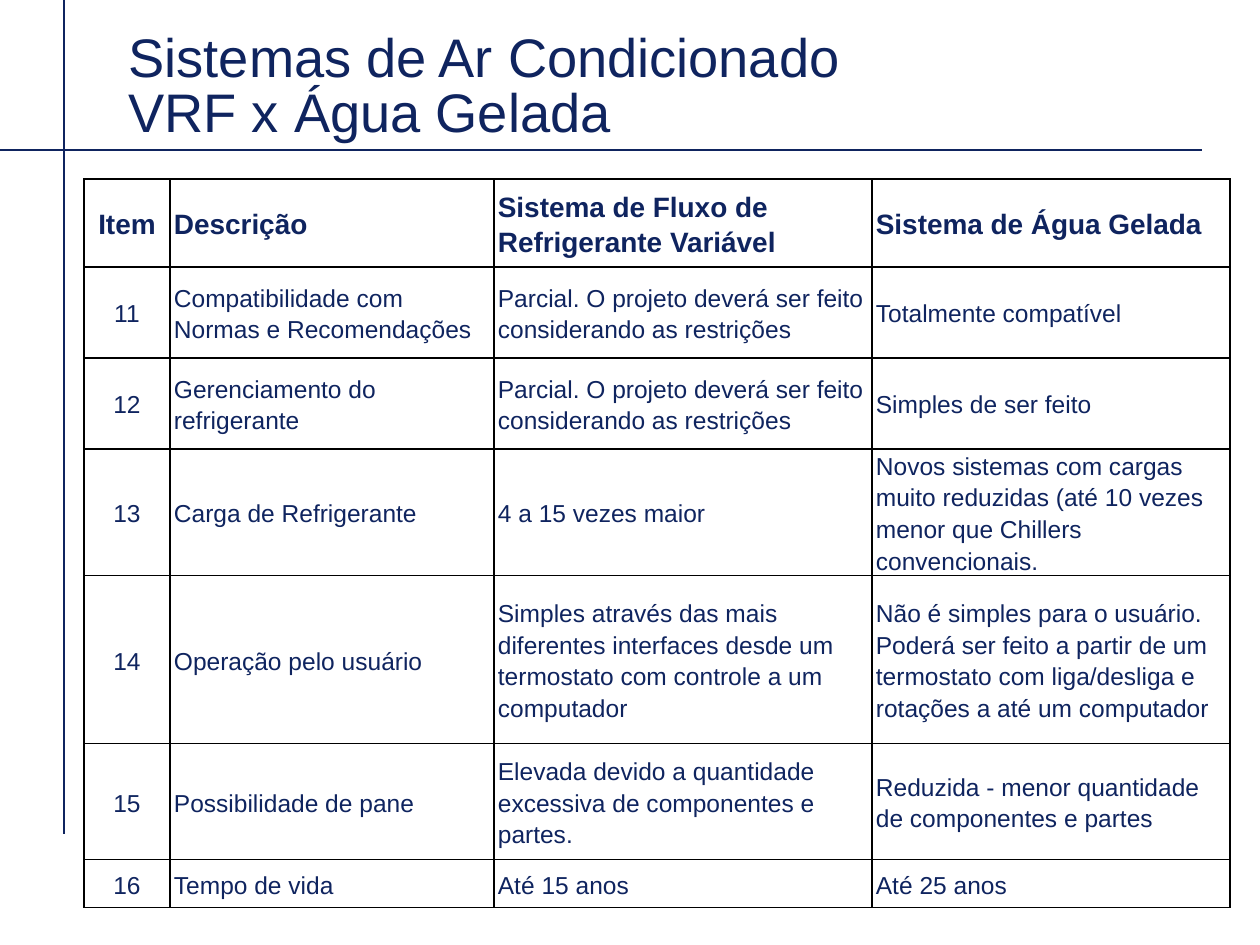
from copy import deepcopy
from dataclasses import dataclass

from lxml import etree
from pptx import Presentation
from pptx.dml.color import RGBColor
from pptx.enum.shapes import MSO_CONNECTOR
from pptx.enum.text import MSO_ANCHOR, MSO_AUTO_SIZE, PP_ALIGN
from pptx.oxml.ns import qn
from pptx.util import Emu, Pt

STRAIGHT = MSO_CONNECTOR.STRAIGHT
MIDDLE, BOTTOM = MSO_ANCHOR.MIDDLE, MSO_ANCHOR.BOTTOM
NO_AUTOFIT = MSO_AUTO_SIZE.NONE
LEFT, CENTER = PP_ALIGN.LEFT, PP_ALIGN.CENTER
EMU_PER_INCH, PX_PER_INCH = 914400, 126


@dataclass(frozen=True)
class Theme:
    """Colours, font and type sizes of the slide."""
    navy: RGBColor = RGBColor(0x0F, 0x24, 0x5F)
    white: RGBColor = RGBColor(0xFF, 0xFF, 0xFF)
    border: str = "000000"
    font: str = "Arial"
    title: int = 31
    header: int = 16
    body: int = 14
    rule: float = 0.75
    grid: float = 1


THEME = Theme()
SLIDE_BOX = (0, 0, 1260, 945)
TITLE_BOX = (116, 21, 932, 129)
TABLE_BOX = (84, 179, 1145, 736)
COLUMN_WIDTHS = (86, 324, 378, 358)
ROW_HEIGHTS = (88, 91, 91, 94, 168, 116, 48)
CELL_INSET = 4
TITLE = "Sistemas de Ar Condicionado\vVRF x Água Gelada"
RESTRICTIONS = "Parcial. O projeto deverá ser feito considerando as restrições"
COMPARISON = (
    ("Item", "Descrição", "Sistema de Fluxo de Refrigerante Variável",
     "Sistema de Água Gelada"),
    ("11", "Compatibilidade com Normas e Recomendações", RESTRICTIONS,
     "Totalmente compatível"),
    ("12", "Gerenciamento do refrigerante", RESTRICTIONS,
     "Simples de ser feito"),
    ("13", "Carga de Refrigerante", "4 a 15 vezes maior",
     "Novos sistemas com cargas muito reduzidas (até 10 vezes menor que "
     "Chillers convencionais."),
    ("14", "Operação pelo usuário",
     "Simples através das mais diferentes interfaces desde um termostato "
     "com controle a um computador",
     "Não é simples para o usuário.\nPoderá ser feito a partir de um "
     "termostato com liga/desliga e rotações a até um computador"),
    ("15", "Possibilidade de pane",
     "Elevada devido a quantidade excessiva de componentes e partes.",
     "Reduzida - menor quantidade de componentes e partes"),
    ("16", "Tempo de vida", "Até 15 anos", "Até 25 anos"),
)


def px(length):
    """Turn px into EMU."""
    return Emu(round(length * EMU_PER_INCH / PX_PER_INCH))


def write_text(frame, text, *, size, bold=False, align=LEFT, spacing=1.0):
    """Fill a text frame and format each paragraph and line break."""
    frame.text = text
    for paragraph in frame.paragraphs:
        paragraph.alignment = align
        paragraph.line_spacing = spacing
        for run in paragraph.runs:
            run.font.name = THEME.font
            run.font.size = Pt(size)
            run.font.bold = bold
            run.font.color.rgb = THEME.navy
        for line_break in paragraph._p.findall(qn("a:br")):
            line_break.insert(0, deepcopy(paragraph.runs[0]._r.rPr))


def add_rule(slide, start, end):
    """Draw one thin straight rule."""
    rule = slide.shapes.add_connector(
        STRAIGHT, *(px(value) for value in (*start, *end)))
    rule.line.color.rgb = THEME.navy
    rule.line.width = Pt(THEME.rule)
    etree.SubElement(rule._element.spPr, qn("a:effectLst"))


def add_crossed_rules(slide, box):
    """Draw the vertical and horizontal rules that frame the slide."""
    left, top, _, _ = box
    add_rule(slide, (left + 64, top + 834), (left + 64, top))
    add_rule(slide, (left, top + 150), (left + 1202, top + 150))


def place_title(slide, box):
    """Move and format the title placeholder."""
    title = slide.shapes.title
    title.left, title.top, title.width, title.height = map(px, box)
    frame = title.text_frame
    frame.word_wrap = True
    frame.auto_size = NO_AUTOFIT
    frame.vertical_anchor = BOTTOM
    write_text(frame, TITLE, size=THEME.title, spacing=0.85)


def set_borders(cell):
    """Give a cell solid borders on its four sides."""
    properties = cell._tc.get_or_add_tcPr()
    for position, side in enumerate(("a:lnL", "a:lnR", "a:lnT", "a:lnB")):
        border = etree.Element(qn(side), w=str(Pt(THEME.grid)))
        fill = etree.SubElement(border, qn("a:solidFill"))
        etree.SubElement(fill, qn("a:srgbClr"), val=THEME.border)
        properties.insert(position, border)


def add_comparison(slide, box):
    """Build the table that compares the two systems."""
    table = slide.shapes.add_table(
        len(COMPARISON), len(COLUMN_WIDTHS), *map(px, box)).table
    table.horz_banding = False
    for column, width in zip(table.columns, COLUMN_WIDTHS):
        column.width = px(width)
    for row_index, (row, height) in enumerate(zip(table.rows, ROW_HEIGHTS)):
        row.height = px(height)
        is_header = row_index == 0
        for column_index, cell in enumerate(row.cells):
            cell.fill.solid()
            cell.fill.fore_color.rgb = THEME.white
            cell.vertical_anchor = MIDDLE
            cell.margin_left = cell.margin_right = px(CELL_INSET)
            cell.margin_top = cell.margin_bottom = 0
            set_borders(cell)
            write_text(cell.text_frame, COMPARISON[row_index][column_index],
                       size=THEME.header if is_header else THEME.body,
                       bold=is_header, spacing=1.15,
                       align=CENTER if column_index == 0 else LEFT)


def main():
    """Build and save the slide."""
    presentation = Presentation()
    presentation.slide_width, presentation.slide_height = map(px, SLIDE_BOX[2:])
    slide = presentation.slides.add_slide(presentation.slide_layouts[5])
    add_crossed_rules(slide, SLIDE_BOX)
    place_title(slide, TITLE_BOX)
    add_comparison(slide, TABLE_BOX)
    presentation.save("out.pptx")


if __name__ == "__main__":
    main()
